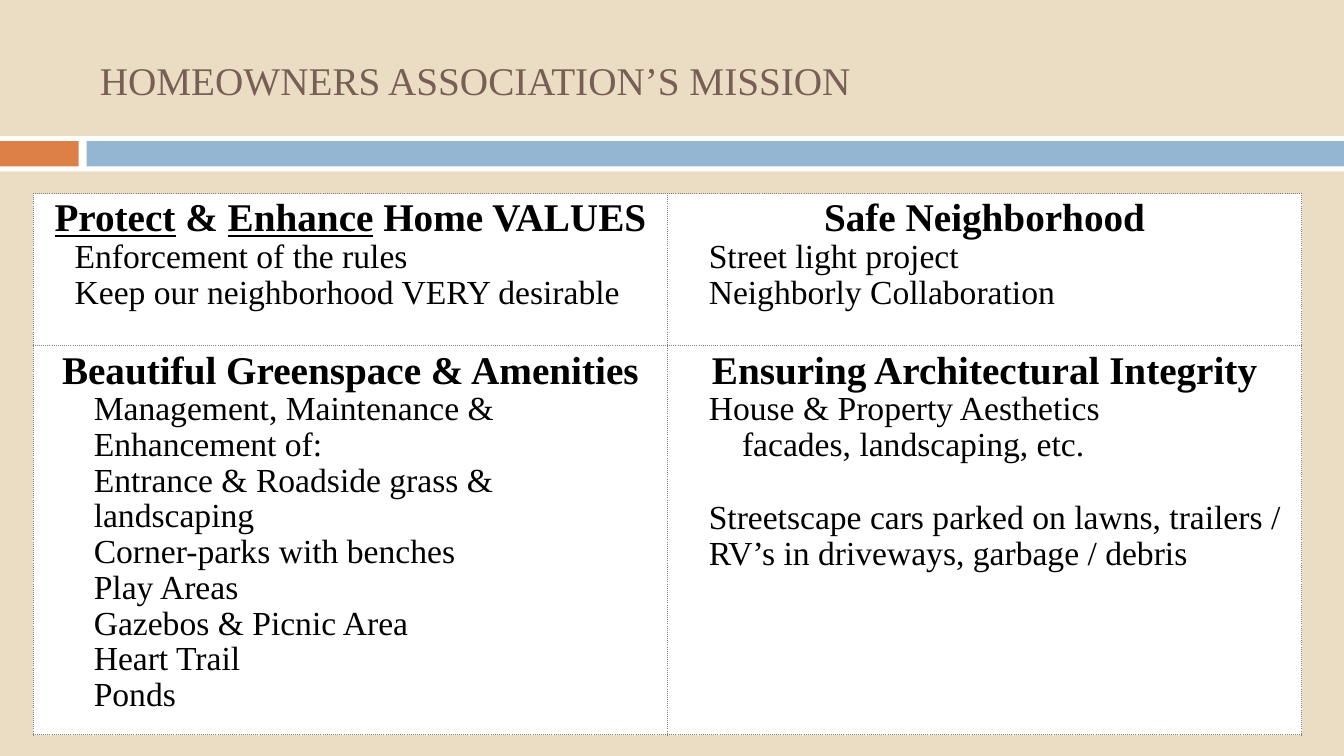
"""Builds the slide on the mission of the homeowners association."""
from lxml import etree
from pptx import Presentation, util as u
from pptx.dml.color import RGBColor
from pptx.enum import shapes, text
from pptx.oxml import ns

FONT = "Times New Roman"
TITLE = "HOMEOWNERS ASSOCIATION’S MISSION"
NEAR, DEEP, SUB = 0.31, 0.5, 0.64
GAP = 26.5
CELLS = [
    [
        ("_Protect_ & _Enhance_ Home VALUES", [
            ("Enforcement of the rules", NEAR, 0),
            ("Keep our neighborhood VERY desirable", NEAR, 0),
        ]),
        ("Safe Neighborhood", [
            ("Street light project", NEAR, 0),
            ("Neighborly Collaboration", NEAR, 0),
        ]),
    ],
    [
        ("Beautiful Greenspace & Amenities", [
            (line, DEEP, 0) for line in (
                "Management, Maintenance & Enhancement of:",
                "Entrance & Roadside grass & landscaping",
                "Corner-parks with benches",
                "Play Areas",
                "Gazebos & Picnic Area",
                "Heart Trail",
                "Ponds",
            )
        ]),
        ("Ensuring Architectural Integrity", [
            ("House & Property Aesthetics", NEAR, 0),
            ("facades, landscaping, etc.", SUB, 0),
            ("Streetscape cars parked on lawns, trailers / "
             "RV’s in driveways, garbage / debris", NEAR, GAP),
        ]),
    ],
]
WIDE, HIGH = 13.33, 7.5
BARS = [
    (0, 1.35, WIDE, 0.35, "FFFFFF"),
    (0, 1.4, 0.78, 0.25, "DD8047"),
    (0.86, 1.4, WIDE - 0.86, 0.25, "94B6D2"),
]
LEFT, TOP, COL = 0.33, 1.92, 6.29
ROWS = [1.51, 3.86]


def paint(fill, color):
    """Fill with one solid colour."""
    fill.solid()
    fill.fore_color.rgb = RGBColor.from_string(color)


def write(para, words, size=24, color="000000", bold=False, indent=0,
          before=0, align=text.PP_ALIGN.LEFT, space=0.96):
    """Write one paragraph, underlining the words set between underscores."""
    props = para._p.get_or_add_pPr()
    props.set("marL", str(u.Inches(indent)))
    props.set("indent", "0")
    para.alignment = align
    para.line_spacing = space
    para.space_before = u.Pt(before)
    for i, part in enumerate(words.split("_")):
        if part:
            run = para.add_run()
            run.text = part
            font = run.font
            font.name, font.size, font.bold = FONT, u.Pt(size), bold
            font.underline = i % 2 == 1
            font.color.rgb = RGBColor.from_string(color)


def border(cell):
    """Draw dotted grey lines round a cell."""
    props = cell._tc.get_or_add_tcPr()
    for side in ("lnL", "lnR", "lnT", "lnB"):
        line = etree.SubElement(props, ns.qn("a:" + side), w=str(u.Pt(1)))
        fill = etree.SubElement(line, ns.qn("a:solidFill"))
        etree.SubElement(fill, ns.qn("a:srgbClr"), val="808080")
        etree.SubElement(line, ns.qn("a:prstDash"), val="sysDot")


def main():
    """Build and save the slide."""
    deck = Presentation()
    deck.slide_width, deck.slide_height = u.Inches(WIDE), u.Inches(HIGH)
    slide = deck.slides.add_slide(deck.slide_layouts[5])
    paint(slide.background.fill, "EBDDC3")

    title = slide.shapes.title
    title.left, title.top = u.Inches(0.89), u.Inches(0.25)
    title.width, title.height = u.Inches(11.89), u.Inches(1.08)
    title.text_frame.vertical_anchor = text.MSO_ANCHOR.MIDDLE
    write(title.text_frame.paragraphs[0], TITLE, size=28, color="775F55",
          space=1.0)

    for *box, color in BARS:
        bar = slide.shapes.add_shape(shapes.MSO_SHAPE.RECTANGLE,
                                     *map(u.Inches, box))
        bar.shadow.inherit = False
        paint(bar.fill, color)
        bar.line.fill.background()

    box = map(u.Inches, (LEFT, TOP, 2 * COL, sum(ROWS)))
    table = slide.shapes.add_table(2, 2, *box).table
    table.first_row = table.horz_banding = False
    for col in table.columns:
        col.width = u.Inches(COL)
    for r, (row, high) in enumerate(zip(CELLS, ROWS)):
        table.rows[r].height = u.Inches(high)
        for c, (head, lines) in enumerate(row):
            cell = table.cell(r, c)
            border(cell)
            paint(cell.fill, "FFFFFF")
            frame = cell.text_frame
            write(frame.paragraphs[0], head, size=28, bold=True,
                  align=text.PP_ALIGN.CENTER)
            for line, indent, before in lines:
                write(frame.add_paragraph(), line, indent=indent,
                      before=before)
    deck.save("out.pptx")


if __name__ == "__main__":
    main()
